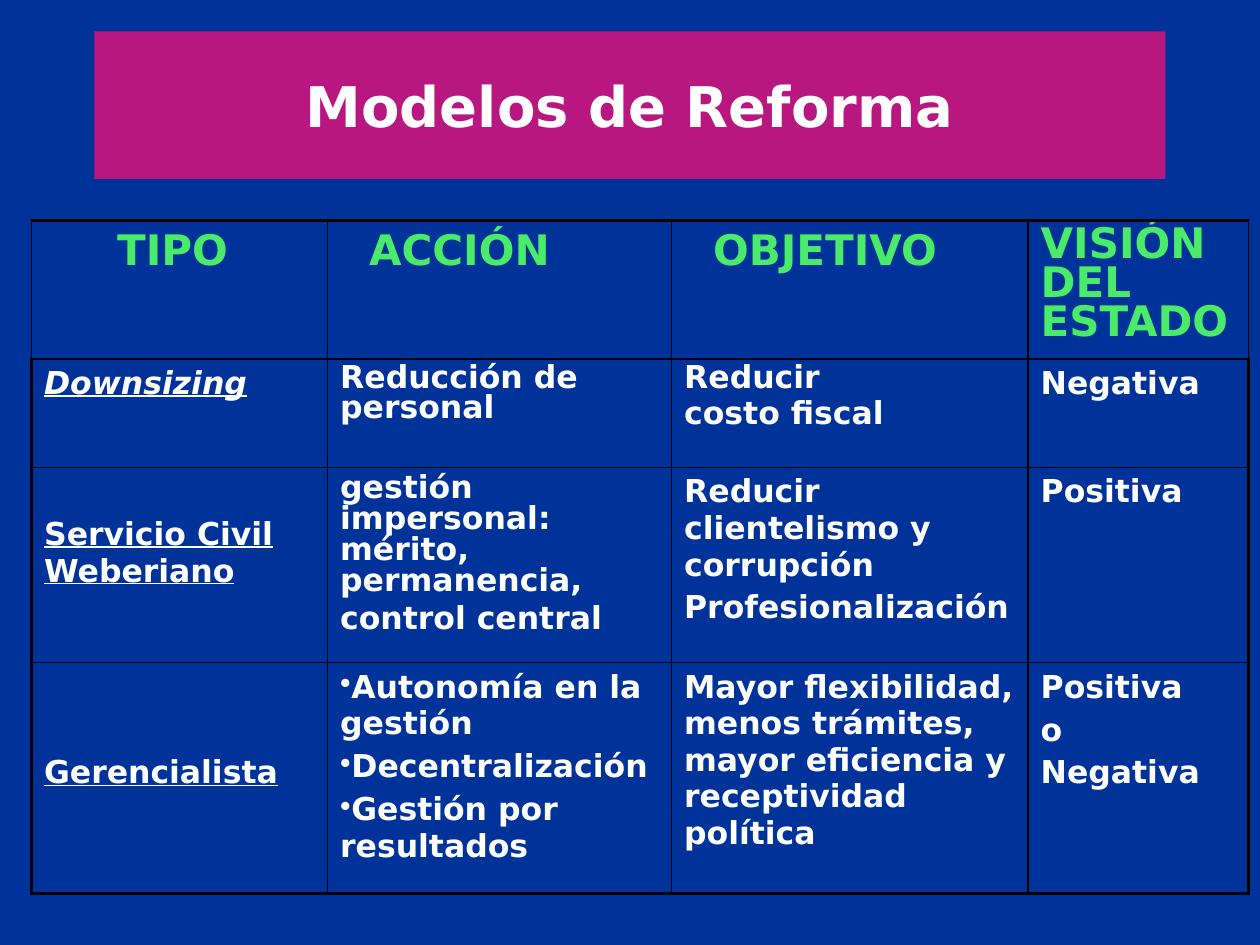
from dataclasses import dataclass

from lxml.etree import SubElement
from pptx import Presentation
from pptx.dml.color import RGBColor
from pptx.enum.shapes import MSO_SHAPE as Shape
from pptx.enum.text import MSO_ANCHOR as Anchor, PP_ALIGN as Align
from pptx.oxml import parse_xml
from pptx.oxml.ns import nsdecls, qn
from pptx.util import Inches, Pt

NAVY = RGBColor(0x00, 0x33, 0x99)
MAGENTA = RGBColor(0xB7, 0x17, 0x7E)
GREEN = RGBColor(0x49, 0xEB, 0x68)
WHITE = RGBColor(0xFF, 0xFF, 0xFF)
BLACK = RGBColor(0x00, 0x00, 0x00)
FONT = "DejaVu Sans"
THIN, THICK = 1, 2.25
CELL_MARGIN = 0.05
LINE_HEIGHT = 0.34
COLUMN_WIDTHS = (2.35, 2.73, 2.83, 1.75)
ROW_HEIGHTS = (1.1, 0.86, 1.55, 1.83)


@dataclass(frozen=True)
class CellText:
    """Paragraphs of one table cell and their format."""

    paragraphs: tuple[str, ...]
    spacing: float = 1.0
    indent: float = 0
    lines_down: int = 0
    italic: bool = False
    underline: bool = False
    bullet: bool = False


ROWS = (
    (
        CellText(("TIPO",), indent=0.58),
        CellText(("ACCIÓN",), indent=0.23),
        CellText(("OBJETIVO",), indent=0.23),
        CellText(("VISIÓN DEL ESTADO",), spacing=0.8),
    ),
    (
        CellText(("Downsizing",), italic=True, underline=True),
        CellText(("Reducción de personal",), spacing=0.8),
        CellText(("Reducir", "costo fiscal"), spacing=0.8),
        CellText(("Negativa",)),
    ),
    (
        CellText(("Servicio Civil Weberiano",), lines_down=1, underline=True),
        CellText(("gestión impersonal: mérito, permanencia,", "control central"), spacing=0.85),
        CellText(("Reducir clientelismo y corrupción", "Profesionalización")),
        CellText(("Positiva",)),
    ),
    (
        CellText(("Gerencialista",), lines_down=2, underline=True),
        CellText(
            ("Autonomía en la gestión", "Decentralización", "Gestión por resultados"),
            bullet=True,
        ),
        CellText(("Mayor flexibilidad, menos trámites, mayor eficiencia y receptividad política",)),
        CellText(("Positiva", "o", "Negativa")),
    ),
)


def write_text(frame, paragraphs: tuple[str, ...], *, size: float, color: RGBColor,
               align=Align.LEFT, spacing: float = 1.0, indent: float = 0,
               italic: bool = False, underline: bool = False, bullet: bool = False) -> None:
    """Fill a text frame with equally formatted paragraphs."""
    frame.word_wrap = True
    for index, text in enumerate(paragraphs):
        paragraph = frame.add_paragraph() if index else frame.paragraphs[0]
        paragraph.alignment = align
        paragraph.line_spacing = spacing
        paragraph.space_before = Pt(0.2 * size)
        properties = paragraph._p.get_or_add_pPr()
        properties.set("marL", str(Inches(indent)))
        properties.set("indent", "0")
        if bullet:
            SubElement(properties, qn("a:buChar")).set("char", "•")
        run = paragraph.add_run()
        run.text = text
        font = run.font
        font.name, font.size, font.bold = FONT, Pt(size), True
        font.italic, font.underline = italic, underline
        font.color.rgb = color


def set_borders(cell, widths: dict[str, float]) -> None:
    """Draw the cell borders with the given widths in points."""
    properties = cell._tc.get_or_add_tcPr()
    for index, (side, width) in enumerate(widths.items()):
        properties.insert(index, parse_xml(
            f'<a:ln{side} {nsdecls("a")} w="{Pt(width)}"><a:solidFill>'
            f'<a:srgbClr val="{BLACK}"/></a:solidFill></a:ln{side}>'
        ))


def add_title(slide, text: str) -> None:
    """Add the title band."""
    shape = slide.shapes.add_shape(
        Shape.RECTANGLE, Inches(0.75), Inches(0.25), Inches(8.5), Inches(1.17)
    )
    shape.shadow.inherit = False
    shape.fill.solid()
    shape.fill.fore_color.rgb = MAGENTA
    shape.line.fill.background()
    shape.text_frame.vertical_anchor = Anchor.MIDDLE
    write_text(shape.text_frame, (text,), size=32, color=WHITE, align=Align.CENTER)


def add_models_table(slide) -> None:
    """Add the table that compares the reform models."""
    last_row, last_column = len(ROWS) - 1, len(COLUMN_WIDTHS) - 1
    table = slide.shapes.add_table(
        len(ROWS), len(COLUMN_WIDTHS), Inches(0.25), Inches(1.75),
        Inches(sum(COLUMN_WIDTHS)), Inches(sum(ROW_HEIGHTS)),
    ).table
    for column, width in zip(table.columns, COLUMN_WIDTHS):
        column.width = Inches(width)
    for row, height in zip(table.rows, ROW_HEIGHTS):
        row.height = Inches(height)
    for row_index, row in enumerate(ROWS):
        header = row_index == 0
        for column_index, content in enumerate(row):
            cell = table.cell(row_index, column_index)
            cell.fill.background()
            cell.margin_top = Inches(CELL_MARGIN + content.lines_down * LINE_HEIGHT)
            set_borders(cell, {
                "L": THICK if column_index == 0 and not header else THIN,
                "R": THICK if column_index == last_column and not header else THIN,
                "T": THICK if header else THIN,
                "B": THICK if row_index == last_row else THIN,
            })
            write_text(
                cell.text_frame, content.paragraphs,
                size=24 if header else 18, color=GREEN if header else WHITE,
                spacing=content.spacing, indent=content.indent, italic=content.italic,
                underline=content.underline, bullet=content.bullet,
            )


def main() -> None:
    """Build and save the slide."""
    presentation = Presentation()
    presentation.slide_width, presentation.slide_height = Inches(10), Inches(7.5)
    slide = presentation.slides.add_slide(presentation.slide_layouts[6])
    slide.background.fill.solid()
    slide.background.fill.fore_color.rgb = NAVY
    add_title(slide, "Modelos de Reforma")
    add_models_table(slide)
    presentation.save("out.pptx")


if __name__ == "__main__":
    main()
